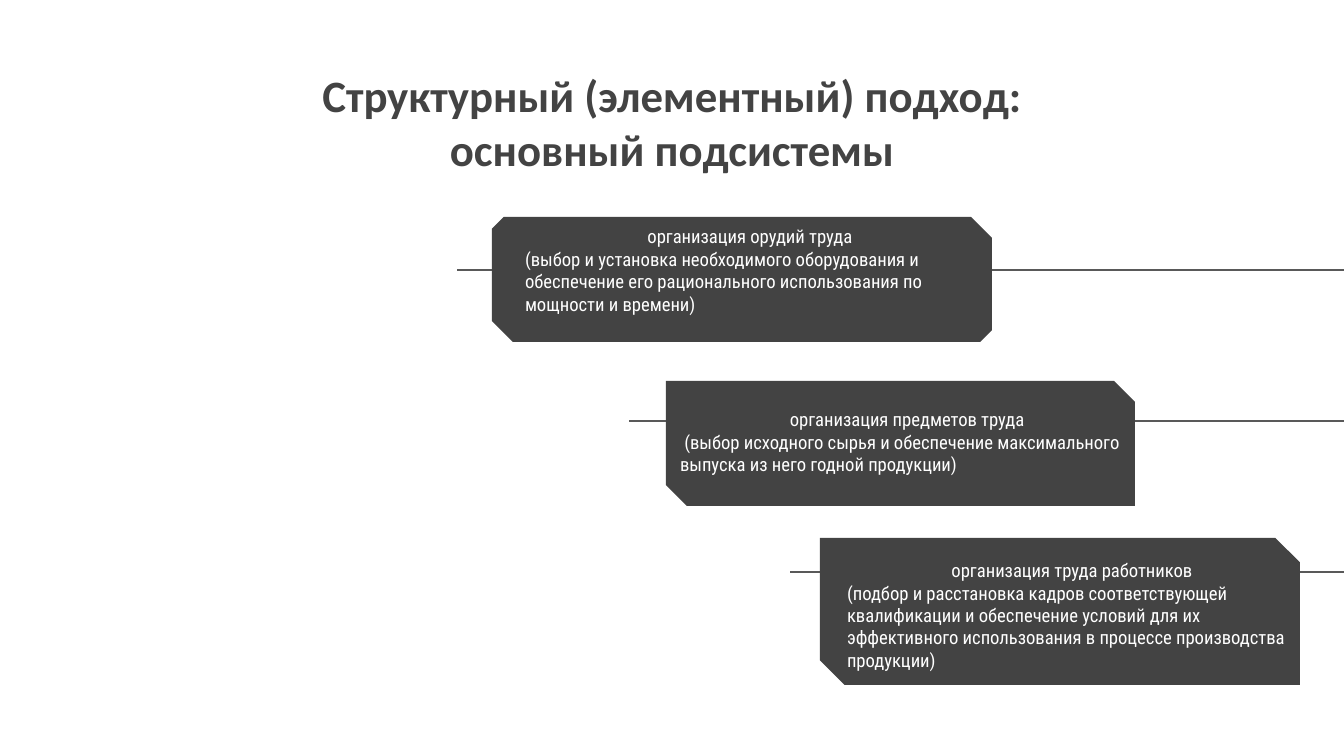
"""Build a slide with three stepped blocks describing the structural approach."""
import pptx
import pptx.dml.color
import pptx.enum.shapes
import pptx.enum.text
import pptx.util
import lxml.etree
from pptx.oxml.ns import qn

ANCHOR = pptx.enum.text.MSO_ANCHOR
ALIGN = pptx.enum.text.PP_ALIGN
DARK = pptx.dml.color.RGBColor(0x43, 0x43, 0x43)
LINE_GRAY = pptx.dml.color.RGBColor(0x59, 0x59, 0x59)
WHITE = pptx.dml.color.RGBColor(0xFF, 0xFF, 0xFF)

SCALE = 914400 / 134.4
SLIDE_WIDTH, SLIDE_HEIGHT = 1344, 756
TITLE = "Структурный (элементный) подход: основный подсистемы"
TITLE_BOX = (289, 52, 766, 139)
TEXT_WIDTH, TEXT_HEIGHT = 480, 50
INSET = 13
SNIP = 0.167
FIRST_LINE_TOP, LINE_STEP = 270, 151

BLOCKS = [
    {
        "heading": "организация орудий труда ",
        "detail": "(выбор и установка необходимого оборудования и обеспечение его "
                  "рационального использования по мощности и времени)",
        "box": (492, 217, 500, 125),
        "small_snip": 0.093,
        "text_at": (512, 245),
        "anchor": ANCHOR.MIDDLE,
        "line_start": 457,
    },
    {
        "heading": "организация предметов труда",
        "detail": " (выбор исходного сырья и обеспечение максимального выпуска "
                  "из него годной продукции)",
        "box": (666, 381, 469, 125),
        "small_snip": 0,
        "text_at": (667, 395),
        "anchor": ANCHOR.TOP,
        "line_start": 629,
    },
    {
        "heading": "организация труда работников ",
        "detail": "(подбор и расстановка кадров соответствующей квалификации и "
                  "обеспечение условий для их эффективного использования в процессе "
                  "производства продукции)",
        "box": (820, 538, 480, 147),
        "small_snip": 0,
        "text_at": (834, 546),
        "anchor": ANCHOR.TOP,
        "line_start": 790,
    },
]


def px(*values):
    return [pptx.util.Emu(round(value * SCALE)) for value in values]


def set_up_frame(frame, anchor):
    frame.word_wrap = True
    frame.auto_size = pptx.enum.text.MSO_AUTO_SIZE.NONE
    frame.vertical_anchor = anchor
    (inset,) = px(INSET)
    frame.margin_left = frame.margin_right = inset
    frame.margin_top = frame.margin_bottom = inset


def add_run(paragraph, text, align, font_name, size, color, bold=False):
    paragraph.alignment = align
    run = paragraph.add_run()
    run.text = text
    run.font.name = font_name
    run.font.size = pptx.util.Pt(size)
    run.font.color.rgb = color
    run.font.bold = bold


def add_title(slide):
    title = slide.shapes.title
    title.left, title.top, title.width, title.height = px(*TITLE_BOX)
    set_up_frame(title.text_frame, ANCHOR.MIDDLE)
    add_run(title.text_frame.paragraphs[0], TITLE, ALIGN.CENTER, "Calibri", 24, DARK, True)


def add_line(slide, start, top):
    line = slide.shapes.add_connector(
        pptx.enum.shapes.MSO_CONNECTOR.STRAIGHT, *px(SLIDE_WIDTH, top, start, top))
    line.line.color.rgb = LINE_GRAY
    line.line.width = pptx.util.Pt(0.75)
    lxml.etree.SubElement(line._element.spPr, qn("a:effectLst"))


def add_block(slide, block):
    shape = slide.shapes.add_shape(
        pptx.enum.shapes.MSO_SHAPE.SNIP_2_DIAG_RECTANGLE, *px(*block["box"]))
    shape.adjustments[0] = block["small_snip"]
    shape.adjustments[1] = SNIP
    shape.shadow.inherit = False
    shape.fill.solid()
    shape.fill.fore_color.rgb = DARK
    shape.line.fill.background()

    frame = slide.shapes.add_textbox(
        *px(*block["text_at"], TEXT_WIDTH, TEXT_HEIGHT)).text_frame
    set_up_frame(frame, block["anchor"])
    for paragraph, text, align in (
            (frame.paragraphs[0], block["heading"], ALIGN.CENTER),
            (frame.add_paragraph(), block["detail"], ALIGN.LEFT)):
        add_run(paragraph, text, align, "Roboto Condensed", 10, WHITE)


def main():
    presentation = pptx.Presentation()
    presentation.slide_width, presentation.slide_height = px(SLIDE_WIDTH, SLIDE_HEIGHT)
    slide = presentation.slides.add_slide(presentation.slide_layouts[5])
    add_title(slide)
    for index, block in enumerate(BLOCKS):
        add_line(slide, block["line_start"], FIRST_LINE_TOP + index * LINE_STEP)
    for block in BLOCKS:
        add_block(slide, block)
    presentation.save("out.pptx")


if __name__ == "__main__":
    main()
